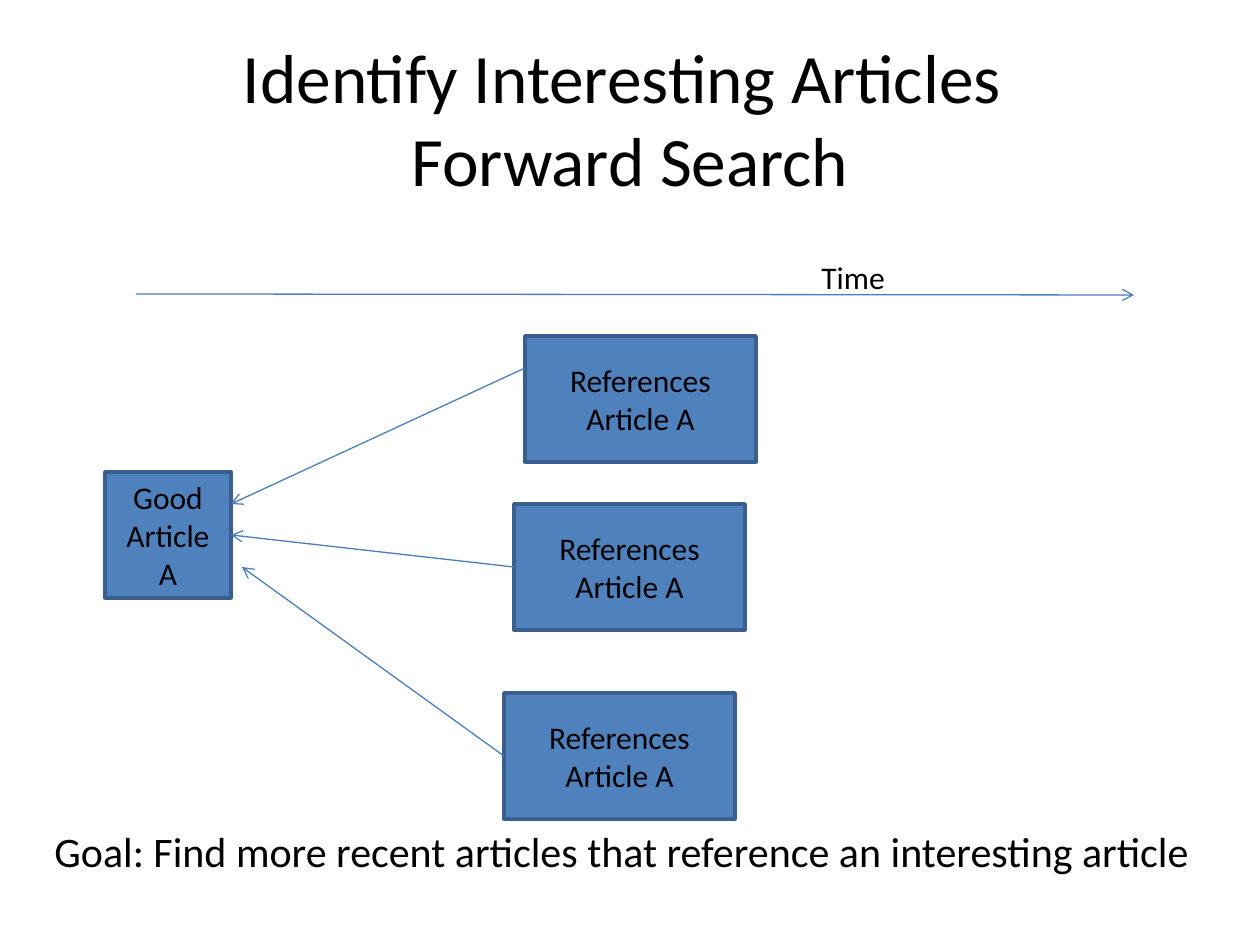
"""Build the slide on finding newer articles with a forward search."""
from lxml import etree
from pptx import Presentation
from pptx.dml.color import RGBColor
from pptx.enum.shapes import MSO_CONNECTOR as LINE, MSO_SHAPE as SHAPE
from pptx.enum.text import MSO_ANCHOR as ANCHOR, PP_ALIGN as ALIGN
from pptx.oxml.ns import qn
from pptx.util import Emu, Pt

COLORS = {"fill": "4F81BD", "border": "3A5F8C", "arrow": "4B7EBC", "text": "000000"}
LEFT, RIGHT = 1, 3


def px(n):
    return Emu(round(n * 914400 / 126))


def write(holder, text, size=18, align=ALIGN.CENTER, anchor=ANCHOR.MIDDLE, wrap=True):
    frame = holder.text_frame
    frame.word_wrap = wrap
    frame.vertical_anchor = anchor
    frame.text = text
    for paragraph in frame.paragraphs:
        paragraph.alignment = align
        for run in paragraph.runs:
            run.font.name = "Calibri"
            run.font.size = Pt(size)
            run.font.color.rgb = RGBColor.from_string(COLORS["text"])


prs = Presentation()
prs.slide_width, prs.slide_height = px(1260), px(945)
slide = prs.slides.add_slide(prs.slide_layouts[6])
shapes = slide.shapes

title = shapes.add_textbox(px(63), px(38), px(1134), px(158))
write(title, "Identify Interesting Articles \vForward Search", size=39.6)

articles = []
for left, top, width, label in [
    (105, 472, 126, "Good Article\nA"),
    (525, 336, 231, "References Article A"),
    (514, 504, 231, "References Article A"),
    (504, 693, 231, "References Article A"),
]:
    article = shapes.add_shape(SHAPE.RECTANGLE, px(left), px(top), px(width), px(126))
    article.shadow.inherit = False
    article.fill.solid()
    article.fill.fore_color.rgb = RGBColor.from_string(COLORS["fill"])
    article.line.color.rgb = RGBColor.from_string(COLORS["border"])
    article.line.width = Pt(2)
    write(article, label)
    articles.append(article)
good, newest, middle, oldest = articles

for start, end, source, target in [
    ((136, 294), (1134, 295), None, None),
    ((525, 368), (231, 504), None, None),
    ((514, 567), (231, 535), middle, good),
    ((504, 756), (242, 567), oldest, None),
]:
    arrow = shapes.add_connector(LINE.STRAIGHT, *map(px, start + end))
    if source:
        arrow.begin_connect(source, LEFT)
    if target:
        arrow.end_connect(target, RIGHT)
    arrow.line.color.rgb = RGBColor.from_string(COLORS["arrow"])
    arrow.line.width = Pt(0.75)
    etree.SubElement(arrow.line._get_or_add_ln(), qn("a:tailEnd"), type="arrow")
    etree.SubElement(arrow._element.spPr, qn("a:effectLst"))

for left, top, width, height, text, size in [
    (809, 252, 89, 50, "Time", 18),
    (42, 819, 1178, 63, "Goal: Find more recent articles that reference an interesting article", 24),
]:
    caption = shapes.add_textbox(px(left), px(top), px(width), px(height))
    write(caption, text, size=size, align=ALIGN.LEFT, anchor=ANCHOR.TOP, wrap=False)

prs.save("out.pptx")
